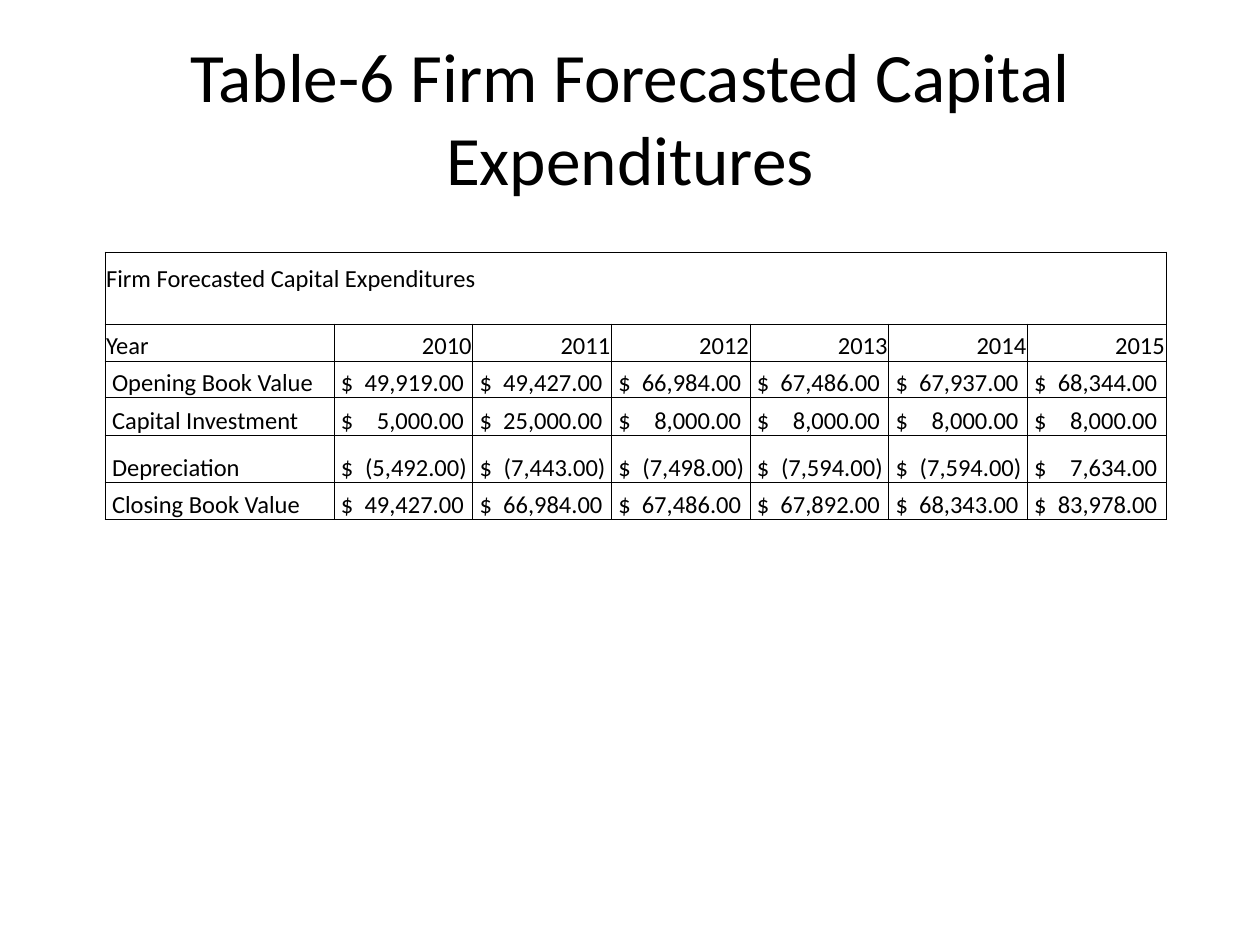
from lxml import etree
from pptx import Presentation
from pptx.dml.color import RGBColor
from pptx.enum.text import MSO_ANCHOR, MSO_AUTO_SIZE, PP_ALIGN
from pptx.oxml.ns import qn
from pptx.util import Emu, Pt

BLACK = RGBColor(0, 0, 0)
FONT = "Calibri"
LEFT, RIGHT, CENTER = PP_ALIGN.LEFT, PP_ALIGN.RIGHT, PP_ALIGN.CENTER

TITLE = "Table-6 Firm Forecasted Capital Expenditures"
CAPTION = "Firm Forecasted Capital Expenditures"
YEARS = ["2010", "2011", "2012", "2013", "2014", "2015"]
ACCOUNTS = [
    ("Opening Book Value", ["49,919.00", "49,427.00", "66,984.00",
                            "67,486.00", "67,937.00", "68,344.00"]),
    ("Capital Investment", ["5,000.00", "25,000.00", "8,000.00",
                            "8,000.00", "8,000.00", "8,000.00"]),
    ("Depreciation", ["(5,492.00)", "(7,443.00)", "(7,498.00)",
                      "(7,594.00)", "(7,594.00)", "7,634.00"]),
    ("Closing Book Value", ["49,427.00", "66,984.00", "67,486.00",
                            "67,892.00", "68,343.00", "83,978.00"]),
]

# Lengths in px, 126 to the inch
TABLE_LEFT, TABLE_TOP, TABLE_WIDTH = 105, 252, 1061
LABEL_WIDTH = 229
ROW_HEIGHTS = [72, 37, 37, 38, 47, 37]
EDGE, INDENT = 1, 7
CAPTION_BOTTOM = 30
AMOUNT_TAB, NEGATIVE_TAB = 123, 126


def px(n):
    return Emu(round(n * 914400 / 126))


def add_text(tf, text, size, align):
    p = tf.paragraphs[0]
    p.alignment = align
    r = p.add_run()
    r.text = text
    r.font.size = Pt(size)
    r.font.name = FONT
    r.font.color.rgb = BLACK
    return p


def add_borders(cell):
    tc_pr = cell._tc.get_or_add_tcPr()
    for side in ("a:lnL", "a:lnR", "a:lnT", "a:lnB"):
        ln = etree.SubElement(tc_pr, qn(side), w=str(Pt(0.5)))
        fill = etree.SubElement(ln, qn("a:solidFill"))
        etree.SubElement(fill, qn("a:srgbClr"), val=str(BLACK))


def fill_cell(cell, text, align=LEFT, indent=EDGE, bottom=0):
    cell.margin_left, cell.margin_right = px(indent), px(EDGE)
    cell.margin_top, cell.margin_bottom = px(EDGE), px(bottom)
    cell.vertical_anchor = MSO_ANCHOR.BOTTOM
    return add_text(cell.text_frame, text, 14, align)


def add_right_tab(p, position):
    tabs = etree.SubElement(p._p.get_or_add_pPr(), qn("a:tabLst"))
    etree.SubElement(tabs, qn("a:tab"), pos=str(px(position)), algn="r")


prs = Presentation()
prs.slide_width, prs.slide_height = px(1260), px(945)
s = prs.slides.add_slide(prs.slide_layouts[5])

title = s.shapes.title
title.left, title.top, title.width, title.height = px(63), px(38), px(1134), px(157)
tf = title.text_frame
tf.word_wrap = True
tf.auto_size = MSO_AUTO_SIZE.NONE
tf.vertical_anchor = MSO_ANCHOR.MIDDLE
add_text(tf, TITLE, 39.6, CENTER)

table = s.shapes.add_table(
    len(ROW_HEIGHTS), 1 + len(YEARS), px(TABLE_LEFT), px(TABLE_TOP),
    px(TABLE_WIDTH), px(sum(ROW_HEIGHTS))).table
table.first_row = table.horz_banding = False
year_width = (TABLE_WIDTH - LABEL_WIDTH) / len(YEARS)
for i, column in enumerate(table.columns):
    column.width = px(year_width if i else LABEL_WIDTH)
for row, height in zip(table.rows, ROW_HEIGHTS):
    row.height = px(height)
for cell in table.iter_cells():
    add_borders(cell)
    cell.fill.background()

table.cell(0, 0).merge(table.cell(0, len(YEARS)))
fill_cell(table.cell(0, 0), CAPTION, bottom=CAPTION_BOTTOM)
fill_cell(table.cell(1, 0), "Year")
for c, year in enumerate(YEARS, 1):
    fill_cell(table.cell(1, c), year, RIGHT)
for r, (label, amounts) in enumerate(ACCOUNTS, 2):
    fill_cell(table.cell(r, 0), label, indent=INDENT)
    for c, amount in enumerate(amounts, 1):
        p = fill_cell(table.cell(r, c), f"$\t{amount}", indent=INDENT)
        add_right_tab(p, NEGATIVE_TAB if amount.startswith("(") else AMOUNT_TAB)

prs.save("out.pptx")
